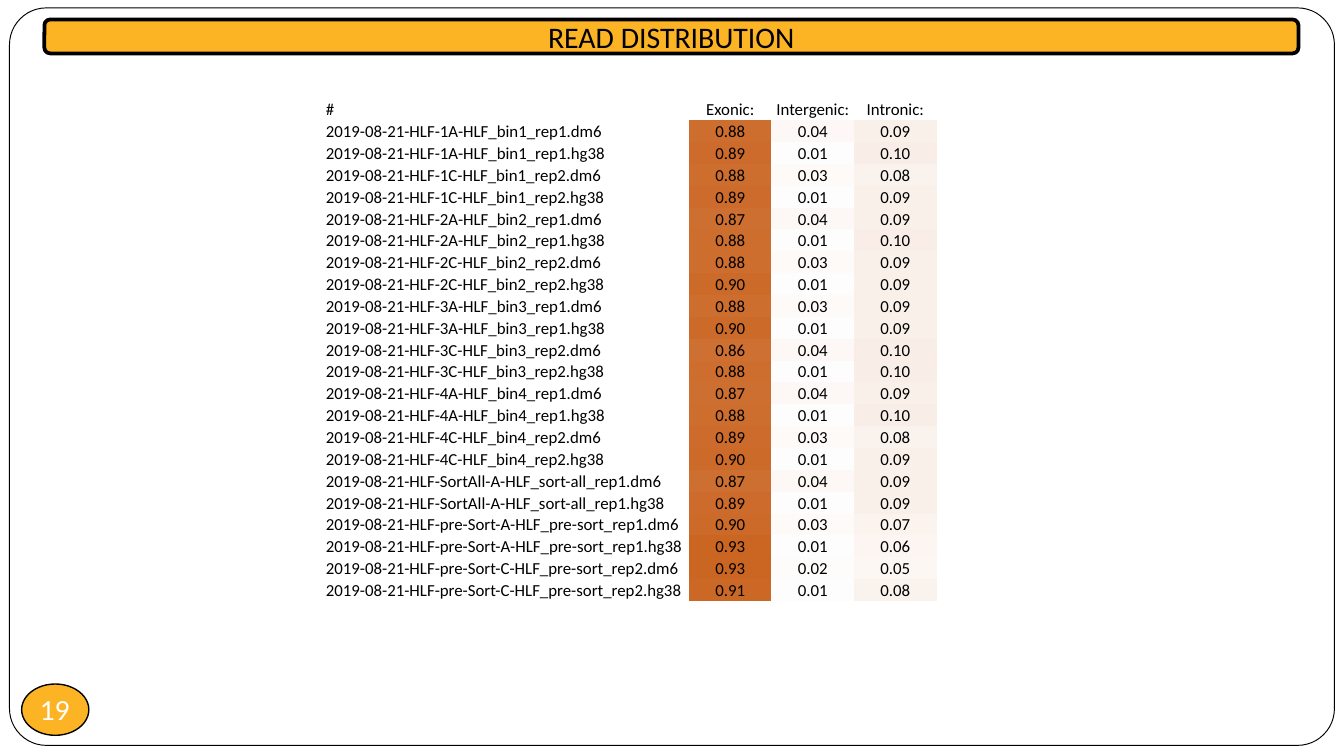
from pptx import Presentation
from pptx.dml.color import RGBColor
from pptx.enum.shapes import MSO_SHAPE
from pptx.enum.text import MSO_ANCHOR, PP_ALIGN
from pptx.util import Cm, Pt

COLORS = {
    "white": "FFFFFF",
    "black": "000000",
    "amber": "FCB424",
    "heat": "C65911",
}
NO_GRID_STYLE = "{2D5ABB26-0587-4C30-8999-92F81FD0307C}"
HEADINGS = ["#", "Exonic:", "Intergenic:", "Intronic:"]
GENOMES = ["dm6", "hg38"]
SAMPLES = [
    ("1A-HLF_bin1_rep1", (0.88, 0.04, 0.09), (0.89, 0.01, 0.10)),
    ("1C-HLF_bin1_rep2", (0.88, 0.03, 0.08), (0.89, 0.01, 0.09)),
    ("2A-HLF_bin2_rep1", (0.87, 0.04, 0.09), (0.88, 0.01, 0.10)),
    ("2C-HLF_bin2_rep2", (0.88, 0.03, 0.09), (0.90, 0.01, 0.09)),
    ("3A-HLF_bin3_rep1", (0.88, 0.03, 0.09), (0.90, 0.01, 0.09)),
    ("3C-HLF_bin3_rep2", (0.86, 0.04, 0.10), (0.88, 0.01, 0.10)),
    ("4A-HLF_bin4_rep1", (0.87, 0.04, 0.09), (0.88, 0.01, 0.10)),
    ("4C-HLF_bin4_rep2", (0.89, 0.03, 0.08), (0.90, 0.01, 0.09)),
    ("SortAll-A-HLF_sort-all_rep1", (0.87, 0.04, 0.09), (0.89, 0.01, 0.09)),
    ("pre-Sort-A-HLF_pre-sort_rep1", (0.90, 0.03, 0.07), (0.93, 0.01, 0.06)),
    ("pre-Sort-C-HLF_pre-sort_rep2", (0.93, 0.02, 0.05), (0.91, 0.01, 0.08)),
]


def color(name):
    return RGBColor.from_string(COLORS[name])


def heat_color(share):
    pairs = zip(color("white"), color("heat"))
    return RGBColor(*(round(low + (high - low) * share) for low, high in pairs))


def add_panel(page, kind, box, fill, line_width):
    panel = page.shapes.add_shape(kind, *(Cm(length) for length in box))
    panel.shadow.inherit = False
    panel.fill.solid()
    panel.fill.fore_color.rgb = color(fill)
    panel.line.color.rgb = color("black")
    panel.line.width = Pt(line_width)
    return panel


def write(frame, text, size, font="Calibri", ink="black", align=PP_ALIGN.CENTER):
    para = frame.paragraphs[0]
    para.alignment = align
    span = para.add_run()
    span.text = text
    span.font.size = Pt(size)
    span.font.name = font
    span.font.color.rgb = color(ink)


def add_frame(page, box):
    border = add_panel(page, MSO_SHAPE.ROUNDED_RECTANGLE, box, "white", 0.5)
    border.adjustments[0] = 0.05


def add_page_number(page, box, number):
    badge = add_panel(page, MSO_SHAPE.OVAL, box, "amber", 0.75)
    frame = badge.text_frame
    frame.margin_left = frame.margin_right = 0
    frame.margin_top = frame.margin_bottom = 0
    frame.word_wrap = False
    frame.vertical_anchor = MSO_ANCHOR.MIDDLE
    write(frame, number, 14, "Lato", "white")


def add_title(page, box, text):
    banner = add_panel(page, MSO_SHAPE.ROUNDED_RECTANGLE, box, "amber", 2)
    banner.text_frame.vertical_anchor = MSO_ANCHOR.MIDDLE
    write(banner.text_frame, text, 16)


def add_distribution(page, box):
    rows = [HEADINGS]
    for sample, *shares in SAMPLES:
        for genome, values in zip(GENOMES, shares):
            rows.append([f"2019-08-21-HLF-{sample}.{genome}", *values])

    left, top, width, height = (Cm(length) for length in box)
    holder = page.shapes.add_table(len(rows), len(HEADINGS), left, top, width, height)
    table = holder.table
    table.first_row = table.horz_banding = False
    holder.element.xpath(".//a:tableStyleId")[0].text = NO_GRID_STYLE

    value_width = Cm(1.56)
    value_count = len(HEADINGS) - 1
    table.columns[0].width = width - value_count * value_width
    for index in range(1, len(HEADINGS)):
        table.columns[index].width = value_width

    for row_index, row in enumerate(rows):
        table.rows[row_index].height = height // len(rows)
        for column_index, value in enumerate(row):
            cell = table.cell(row_index, column_index)
            cell.margin_left = cell.margin_right = cell.margin_top = Cm(0.02)
            cell.margin_bottom = 0
            cell.vertical_anchor = MSO_ANCHOR.BOTTOM
            align = PP_ALIGN.CENTER if column_index else PP_ALIGN.LEFT
            if isinstance(value, float):
                cell.fill.solid()
                cell.fill.fore_color.rgb = heat_color(value)
                value = f"{value:.2f}"
            else:
                cell.fill.background()
            write(cell.text_frame, value, 9, align=align)


def main():
    deck = Presentation()
    deck.slide_width = Cm(25.4)
    deck.slide_height = Cm(14.29)
    page = deck.slides.add_slide(deck.slide_layouts[6])
    add_frame(page, (0.18, 0.15, 25.04, 13.94))
    add_page_number(page, (0.41, 12.93, 1.27, 0.97), "19")
    add_title(page, (0.84, 0.37, 23.7, 0.64), "READ DISTRIBUTION")
    add_distribution(page, (6.14, 1.86, 11.56, 9.52))
    deck.save("out.pptx")


if __name__ == "__main__":
    main()
